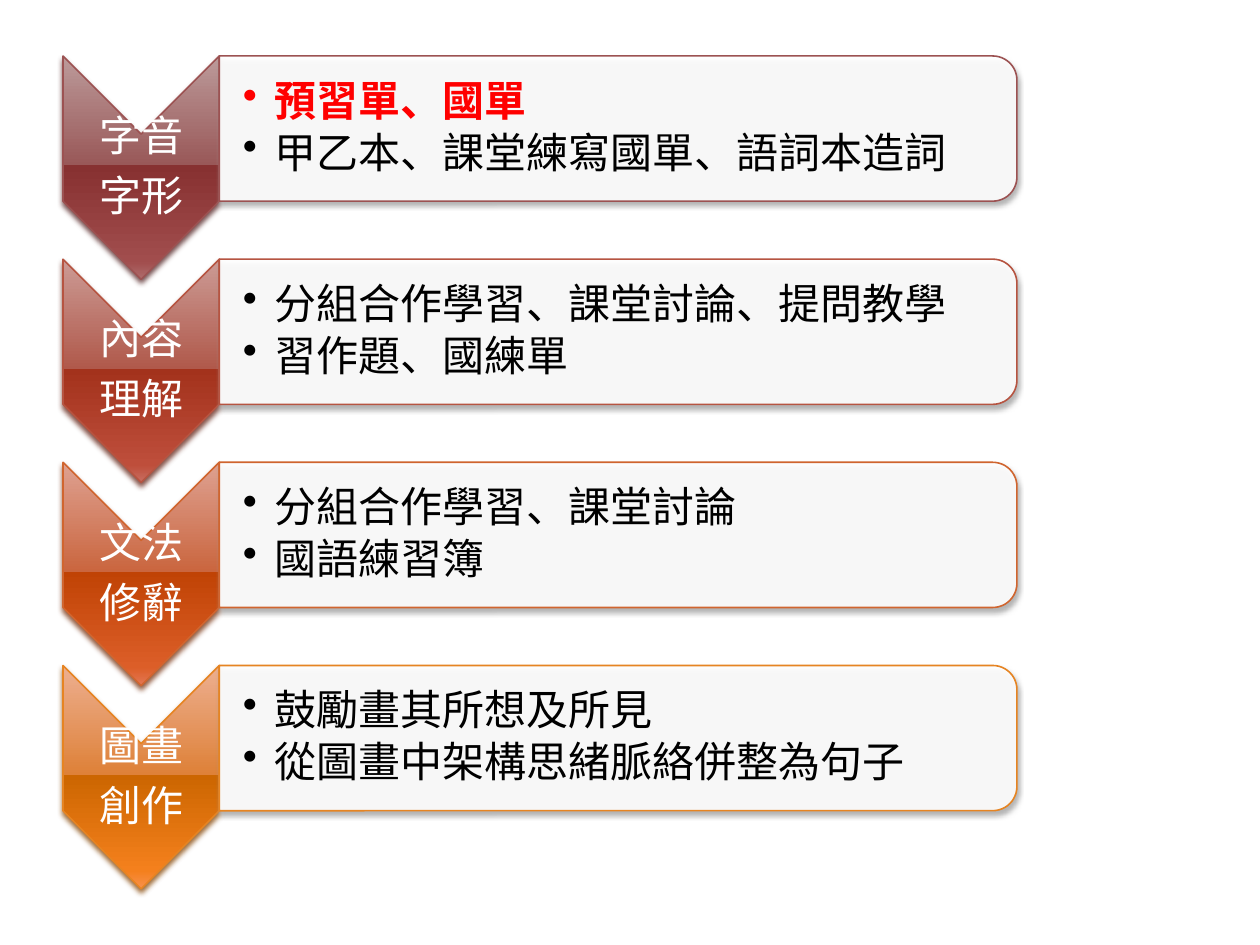
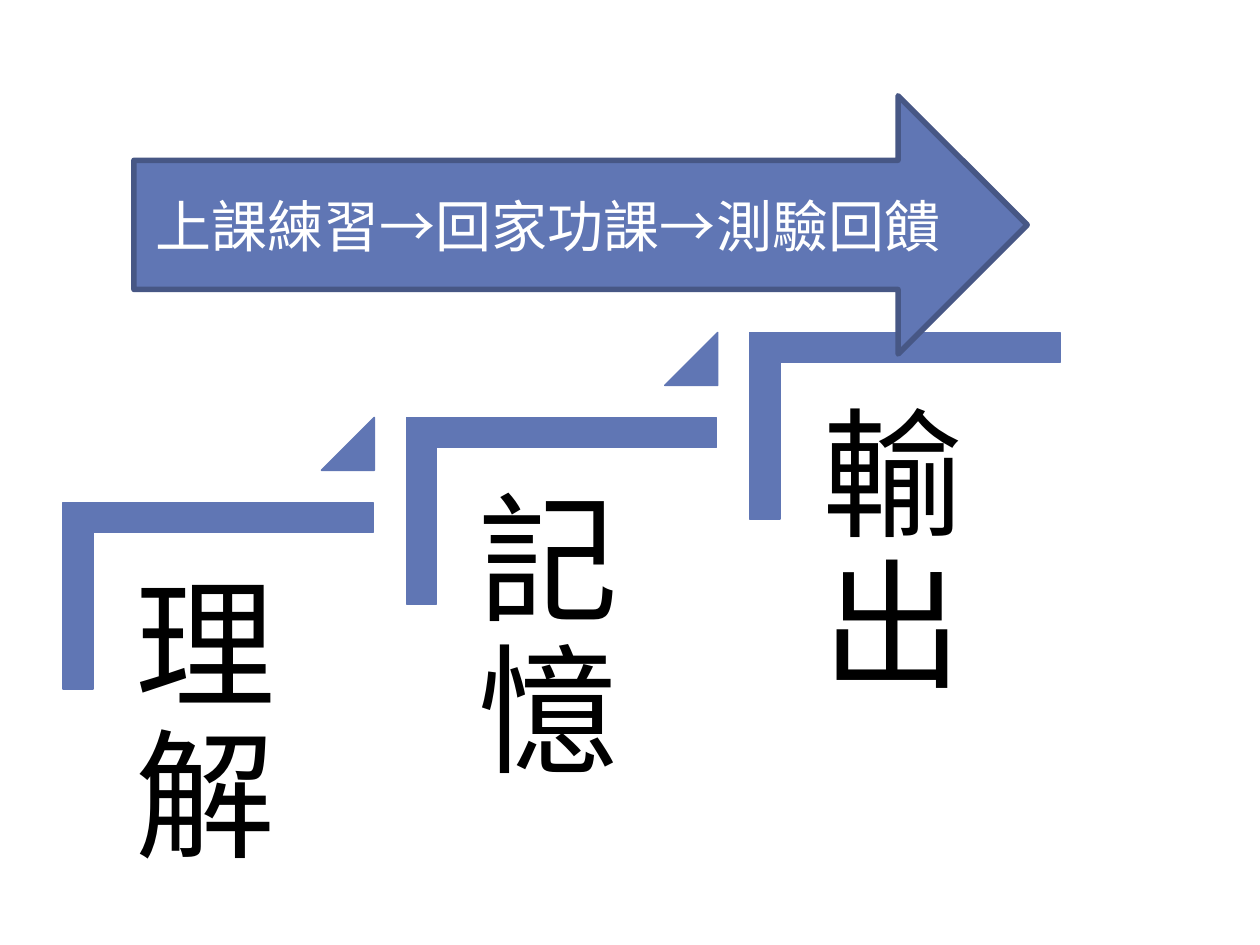
import pptx
import pptx.dml.color
import pptx.enum.shapes
import pptx.enum.text
import pptx.oxml.ns
import pptx.util
from lxml import etree

Pt = pptx.util.Pt
RGBColor = pptx.dml.color.RGBColor
Shapes = pptx.enum.shapes.MSO_SHAPE
Align = pptx.enum.text.PP_ALIGN
Anchor = pptx.enum.text.MSO_ANCHOR

WHITE = RGBColor(0xFF, 0xFF, 0xFF)
BLACK = RGBColor(0x00, 0x00, 0x00)
RED = RGBColor(0xFF, 0x00, 0x00)
BLUE = RGBColor(0x60, 0x76, 0xB4)
DARK_BLUE = RGBColor(0x47, 0x57, 0x85)
PANEL_SHADOW = RGBColor(0x9D, 0x9D, 0x9D)
GRADIENT_POSITIONS = (0, 49, 49, 92, 100)

SKILLS = [
    {"label": ("字音", "字形"),
     "items": ("預習單、國單", "甲乙本、課堂練寫國單、語詞本造詞"),
     "highlight": 0,
     "line": RGBColor(0x9C, 0x52, 0x52), "shadow": RGBColor(0x60, 0x33, 0x33),
     "gradient": ("BC9A9A", "995858", "873131", "A14D4D", "AE6C6C")},
    {"label": ("內容", "理解"),
     "items": ("分組合作學習、課堂討論、提問教學", "習作題、國練單"),
     "line": RGBColor(0xB6, 0x54, 0x41), "shadow": RGBColor(0x70, 0x34, 0x28),
     "gradient": ("CC9B95", "B0594B", "A3321C", "BE4E3B", "C86C5F")},
    {"label": ("文法", "修辭"),
     "items": ("分組合作學習、課堂討論", "國語練習簿"),
     "line": RGBColor(0xD0, 0x65, 0x2F), "shadow": RGBColor(0x81, 0x3E, 0x1D),
     "gradient": ("DEA191", "CA663F", "C04305", "DC5E28", "E37754")},
    {"label": ("圖畫", "創作"),
     "items": ("鼓勵畫其所想及所見", "從圖畫中架構思緒脈絡併整為句子"),
     "line": RGBColor(0xE6, 0x84, 0x22), "shadow": RGBColor(0x8E, 0x52, 0x15),
     "gradient": ("EDAF90", "DE8138", "CC6600", "F4801D", "F8914D")},
]
STEPS = ("理解", "記憶", "輸出")


def add_xml(parent, tag, **attributes):
    return etree.SubElement(parent, pptx.oxml.ns.qn(tag), attributes)


class Deck:
    def __init__(self):
        self.presentation = pptx.Presentation()
        self.presentation.slide_width = Pt(720)
        self.presentation.slide_height = Pt(540)
        self.slide = None
        self.font = None

    def start_slide(self, font):
        self.slide = self.presentation.slides.add_slide(self.presentation.slide_layouts[6])
        self.font = font

    def add_shape(self, kind, left, top, width, height, line, line_width=0.9, fill=BLUE):
        shape = self.slide.shapes.add_shape(kind, Pt(left), Pt(top), Pt(width), Pt(height))
        shape.shadow.inherit = False
        shape.fill.solid()
        shape.fill.fore_color.rgb = fill
        shape.line.color.rgb = line
        shape.line.width = Pt(line_width)
        return shape

    def add_turned_shape(self, kind, left, top, width, height, line, fill=BLUE):
        shift = (width - height) / 2
        shape = self.add_shape(kind, left + shift, top - shift, height, width, line, fill=fill)
        shape.rotation = 90
        return shape

    def add_shadow(self, shape, color):
        effects = shape._element.spPr.find(pptx.oxml.ns.qn("a:effectLst"))
        shadow = add_xml(effects, "a:outerShdw", blurRad=str(Pt(3.1)), dist=str(Pt(2)),
                         dir="5400000", rotWithShape="0")
        add_xml(add_xml(shadow, "a:srgbClr", val=str(color)), "a:alpha", val="83000")

    def set_gradient(self, shape, colors):
        shape.fill.gradient()
        gradient = shape._element.spPr.find(pptx.oxml.ns.qn("a:gradFill"))
        for child in list(gradient):
            gradient.remove(child)
        gradient.set("rotWithShape", "0")
        stops = add_xml(gradient, "a:gsLst")
        for position, color in zip(GRADIENT_POSITIONS, colors):
            stop = add_xml(stops, "a:gs", pos=str(position * 1000))
            add_xml(stop, "a:srgbClr", val=color)
        add_xml(gradient, "a:lin", ang="5400000", scaled="0")

    def set_opacity(self, shape, percent):
        color = shape._element.spPr.find(".//" + pptx.oxml.ns.qn("a:srgbClr"))
        add_xml(color, "a:alpha", val=str(percent * 1000))

    def add_run(self, paragraph, text, size, color, bold=False):
        run = paragraph.add_run()
        run.text = text
        run.font.size = Pt(size)
        run.font.bold = bold
        run.font.color.rgb = color
        run.font.name = self.font
        add_xml(run._r.get_or_add_rPr(), "a:ea", typeface=self.font)

    def add_text(self, box, lines, size, color, gap, insets, anchor=Anchor.MIDDLE,
                 align=Align.LEFT, bullets=False, highlight=None):
        left, top, width, height = box
        frame = self.slide.shapes.add_textbox(Pt(left), Pt(top), Pt(width), Pt(height)).text_frame
        frame.word_wrap = True
        frame.vertical_anchor = anchor
        frame.margin_left = Pt(insets[0])
        frame.margin_top = frame.margin_right = frame.margin_bottom = Pt(insets[1])
        for index, line in enumerate(lines):
            paragraph = frame.add_paragraph() if index else frame.paragraphs[0]
            paragraph.alignment = align
            paragraph.line_spacing = 0.9
            paragraph.space_after = Pt(size * gap)
            if bullets:
                properties = paragraph._p.get_or_add_pPr()
                properties.set("marL", str(Pt(18)))
                properties.set("indent", str(-Pt(18)))
                add_xml(properties, "a:buChar", char="•")
            marked = index == highlight
            self.add_run(paragraph, line, size, RED if marked else color, marked)


def build_skills_slide(deck):
    deck.start_slide("Noto Sans CJK SC")
    for row, skill in enumerate(SKILLS):
        top = 32 + row * 116.1
        chevron = deck.add_turned_shape(Shapes.CHEVRON, 36, top, 89.3, 127.6, skill["line"])
        deck.set_gradient(chevron, skill["gradient"])
        deck.add_shadow(chevron, skill["shadow"])
        deck.add_text((36, top + 45, 89.3, 38.2), skill["label"], 24, WHITE, 0.35,
                      (1.2, 1.2), align=Align.CENTER)
        panel = deck.add_turned_shape(Shapes.ROUND_2_SAME_RECTANGLE, 125.3, top, 455.8, 83,
                                      skill["line"], fill=WHITE)
        deck.set_opacity(panel, 90)
        deck.add_shadow(panel, PANEL_SHADOW)
        deck.add_text((125.3, top + 4, 452, 75), skill["items"], 24, BLACK, 0.15,
                      (13.5, 1.2), bullets=True, highlight=skill.get("highlight"))


def build_steps_slide(deck):
    deck.start_slide("Noto Sans CJK JP")
    for index, step in enumerate(STEPS):
        left, top = 36 + index * 196.2, 287.2 - index * 48.6
        corner = deck.add_turned_shape(Shapes.CORNER, left, top, 177.2, 106.5, BLUE)
        corner.adjustments[0] = corner.adjustments[1] = 0.161
        deck.add_text((left + 17.5, top + 17.5, 160, 140.4), [step], 80, BLACK, 0.35,
                      (24, 24), anchor=Anchor.TOP)
        if index < len(STEPS) - 1:
            triangle = deck.add_shape(Shapes.ISOSCELES_TRIANGLE, left + 147.7, top - 48.6,
                                      30.2, 30.2, BLUE)
            triangle.adjustments[0] = 1

    arrow = deck.add_shape(Shapes.RIGHT_ARROW, 76.5, 54.7, 510.5, 147.6, DARK_BLUE, 3.15)
    arrow.text_frame.word_wrap = True
    arrow.text_frame.vertical_anchor = Anchor.MIDDLE
    paragraph = arrow.text_frame.paragraphs[0]
    paragraph.alignment = Align.CENTER
    deck.add_run(paragraph, "上課練習→回家功課→測驗回饋", 32, WHITE)


def main():
    deck = Deck()
    build_skills_slide(deck)
    build_steps_slide(deck)
    deck.presentation.save("out.pptx")


if __name__ == "__main__":
    main()
